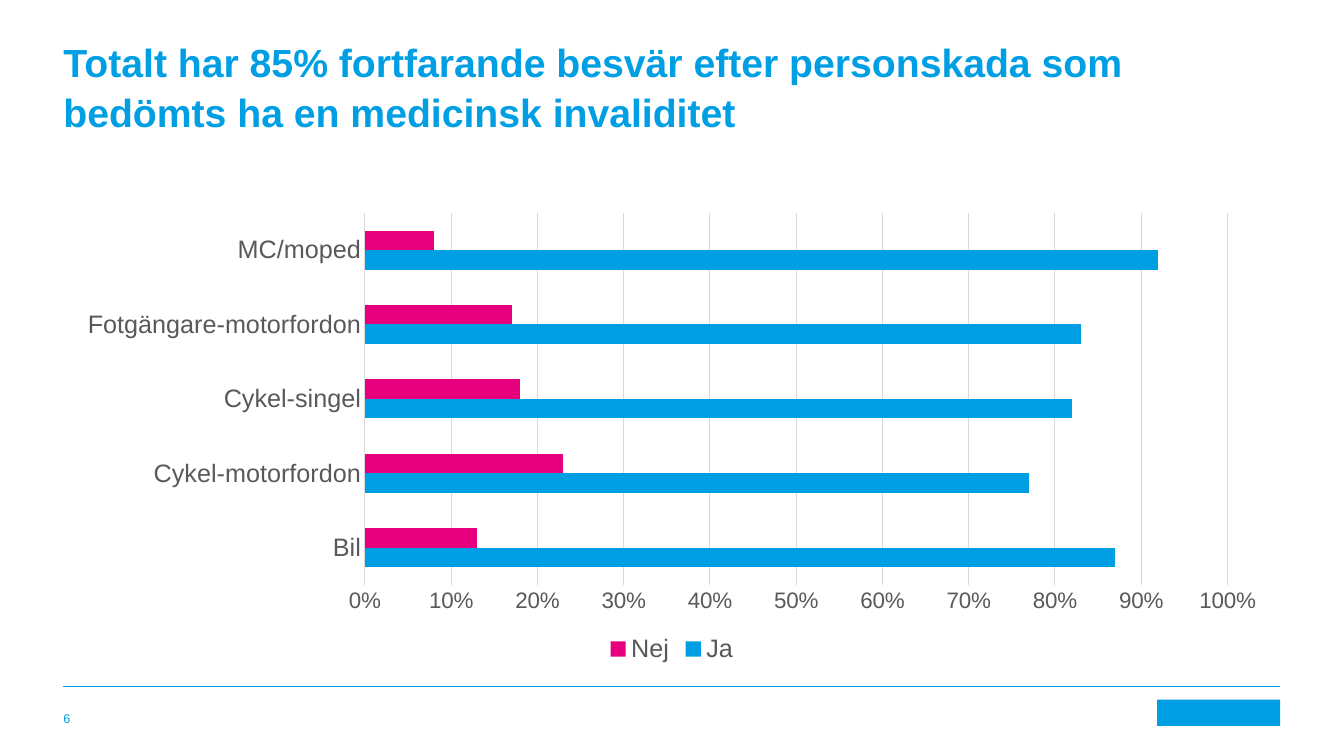
from pptx import Presentation, util as u
from pptx.chart.data import CategoryChartData
from pptx.dml.color import RGBColor
from pptx.enum import chart as ch, shapes, text
from pptx.oxml import parse_xml
from pptx.oxml.ns import nsdecls


def rgb(value):
    return RGBColor.from_string(value)


class Deck:
    font = "Arial"
    blue = "009FE4"
    pink = "E6007E"
    grey = "595959"
    grid = "D9D9D9"

    def __init__(self, width, height):
        self.prs = Presentation()
        self.prs.slide_width, self.prs.slide_height = u.Cm(width), u.Cm(height)
        self.s = self.prs.slides.add_slide(self.prs.slide_layouts[6])

    def style(self, font, size, color, bold=False):
        font.name, font.size, font.bold = self.font, u.Pt(size), bold
        font.color.rgb = rgb(color)

    def text(self, box, words, size, bold=False, anchor="TOP", spacing=1.0):
        tf = self.s.shapes.add_textbox(*map(u.Cm, box)).text_frame
        tf.word_wrap = True
        tf.vertical_anchor = text.MSO_ANCHOR[anchor]
        tf.margin_left = tf.margin_right = tf.margin_top = tf.margin_bottom = 0
        p = tf.paragraphs[0]
        p.line_spacing = spacing
        r = p.add_run()
        r.text = words
        self.style(r.font, size, self.blue, bold)

    def rule(self, left, right, y):
        line = self.s.shapes.add_connector(
            shapes.MSO_CONNECTOR.STRAIGHT, *map(u.Cm, (left, y, right, y)))
        line.line.color.rgb = rgb(self.blue)
        line.line.width = u.Pt(0.5)
        line._element.spPr.append(parse_xml(f"<a:effectLst {nsdecls('a')}/>"))

    def block(self, box):
        sp = self.s.shapes.add_shape(shapes.MSO_SHAPE.RECTANGLE, *map(u.Cm, box))
        sp.shadow.inherit = False
        sp.fill.solid()
        sp.fill.fore_color.rgb = rgb(self.blue)
        sp.line.fill.background()

    def bars(self, box, categories, series):
        data = CategoryChartData(number_format="0%")
        data.categories = categories
        for name, (values, _) in series.items():
            data.add_series(name, values)
        chart = self.s.shapes.add_chart(
            ch.XL_CHART_TYPE.BAR_CLUSTERED, *map(u.Cm, box), data).chart
        self.style(chart.font, 10, "000000")
        chart.has_title = False

        plot = chart.plots[0]
        plot.gap_width, plot.overlap, plot.vary_by_categories = 182, 0, False
        for bar, (_, color) in zip(plot.series, series.values()):
            bar.format.fill.solid()
            bar.format.fill.fore_color.rgb = rgb(color)

        cat, val = chart.category_axis, chart.value_axis
        for axis, size in ((cat, 18), (val, 16)):
            axis.major_tick_mark = axis.minor_tick_mark = ch.XL_TICK_MARK.NONE
            self.style(axis.tick_labels.font, size, self.grey)
        val.minimum_scale, val.maximum_scale, val.major_unit = 0, 1, 0.1
        val.tick_labels.number_format = "0%"
        val.tick_labels.number_format_is_linked = False
        val.has_major_gridlines = True
        val.format.line.fill.background()
        for line in (cat.format.line, val.major_gridlines.format.line):
            line.color.rgb = rgb(self.grid)
            line.width = u.Pt(0.75)

        chart.has_legend = True
        chart.legend.position = ch.XL_LEGEND_POSITION.BOTTOM
        chart.legend.include_in_layout = False
        self.style(chart.legend.font, 18, self.grey)


def main():
    left, width = 1.6, 30.66
    right = left + width
    footer_top, footer_height = 17.63, 0.66
    logo_width = 3.1

    deck = Deck(33.87, 19.05)
    deck.rule(left, right, 17.3)
    deck.block((right - logo_width, footer_top, logo_width, footer_height))
    deck.text((left, 0.91, width, 4.19),
              "Totalt har 85% fortfarande besvär efter personskada som "
              "bedömts ha en medicinsk invaliditet",
              28, bold=True, spacing=1.05)
    deck.text((left, footer_top, 1.47, footer_height), "6", 9, anchor="BOTTOM")
    deck.bars((left, 5.13, width, 11.71),
              ["Bil", "Cykel-motorfordon", "Cykel-singel",
               "Fotgängare-motorfordon", "MC/moped"],
              {"Ja": ((0.87, 0.77, 0.82, 0.83, 0.92), deck.blue),
               "Nej": ((0.13, 0.23, 0.18, 0.17, 0.08), deck.pink)})
    deck.prs.save("out.pptx")


if __name__ == "__main__":
    main()
